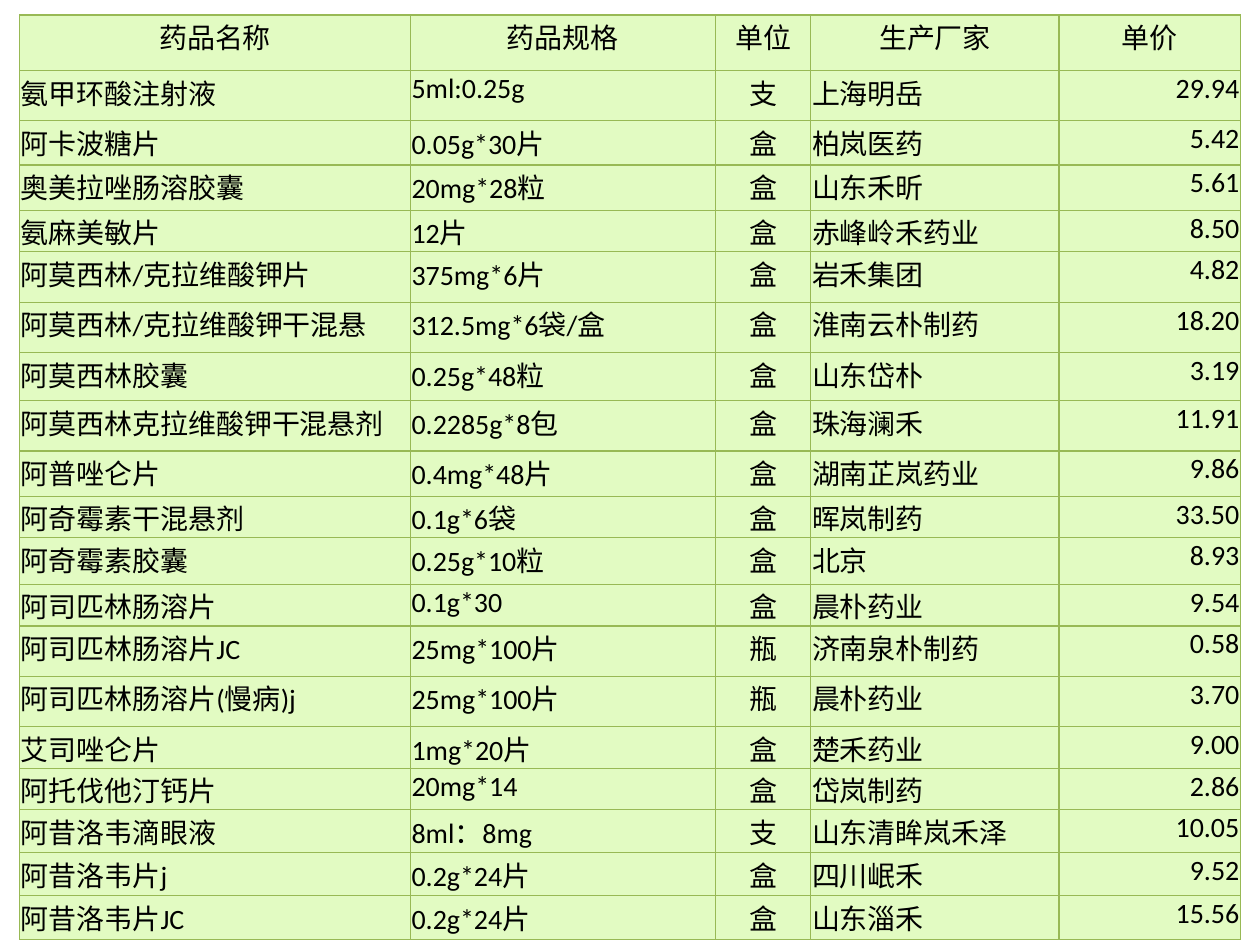
"""Build a one-slide price list of medicines."""
from lxml import etree
from pptx import Presentation
from pptx.dml.color import RGBColor
from pptx.enum.text import MSO_ANCHOR, PP_ALIGN
from pptx.oxml.ns import qn
from pptx.util import Pt

LEFT, MID, RIGHT = PP_ALIGN.LEFT, PP_ALIGN.CENTER, PP_ALIGN.RIGHT
TOP = MSO_ANCHOR.TOP
COLORS = {"fill": "E2FBC2", "line": "98B955", "text": "000000"}
FONT, SIZE, EDGE = "Calibri", 16, 0.75
WIDTHS = [223.2, 174.2, 54.7, 141.8, 103.7]
HEIGHTS = [31.7, 28.8, 25.2, 25.9, 23, 28.8, 28.8, 27.4, 28.8, 25.9,
           23.8, 26.6, 19.4, 28.8, 28.8, 19.4, 23, 24.5, 24.5, 25.2]
ALIGNS = [LEFT, LEFT, MID, LEFT, RIGHT]
HEADS = ["药品名称", "药品规格", "单位", "生产厂家", "单价"]
DRUGS = [
    ["氨甲环酸注射液", "5ml:0.25g", "支", "上海明岳", "29.94"],
    ["阿卡波糖片", "0.05g*30片", "盒", "柏岚医药", "5.42"],
    ["奥美拉唑肠溶胶囊", "20mg*28粒", "盒", "山东禾昕", "5.61"],
    ["氨麻美敏片", "12片", "盒", "赤峰岭禾药业", "8.50"],
    ["阿莫西林/克拉维酸钾片", "375mg*6片", "盒", "岩禾集团", "4.82"],
    ["阿莫西林/克拉维酸钾干混悬", "312.5mg*6袋/盒", "盒", "淮南云朴制药", "18.20"],
    ["阿莫西林胶囊", "0.25g*48粒", "盒", "山东岱朴", "3.19"],
    ["阿莫西林克拉维酸钾干混悬剂", "0.2285g*8包", "盒", "珠海澜禾", "11.91"],
    ["阿普唑仑片", "0.4mg*48片", "盒", "湖南芷岚药业", "9.86"],
    ["阿奇霉素干混悬剂", "0.1g*6袋", "盒", "晖岚制药", "33.50"],
    ["阿奇霉素胶囊", "0.25g*10粒", "盒", "北京", "8.93"],
    ["阿司匹林肠溶片", "0.1g*30", "盒", "晨朴药业", "9.54"],
    ["阿司匹林肠溶片JC", "25mg*100片", "瓶", "济南泉朴制药", "0.58"],
    ["阿司匹林肠溶片(慢病)j", "25mg*100片", "瓶", "晨朴药业", "3.70"],
    ["艾司唑仑片", "1mg*20片", "盒", "楚禾药业", "9.00"],
    ["阿托伐他汀钙片", "20mg*14", "盒", "岱岚制药", "2.86"],
    ["阿昔洛韦滴眼液", "8ml：8mg", "支", "山东清眸岚禾泽", "10.05"],
    ["阿昔洛韦片j", "0.2g*24片", "盒", "四川岷禾", "9.52"],
    ["阿昔洛韦片JC", "0.2g*24片", "盒", "山东淄禾", "15.56"],
]


def tint(name):
    """Return the named colour."""
    return RGBColor.from_string(COLORS[name])


def add_edges(cell):
    """Draw a thin line on all four sides of a cell."""
    props = cell._tc.get_or_add_tcPr()
    for rank, side in enumerate(["lnL", "lnR", "lnT", "lnB"]):
        line = etree.Element(qn(f"a:{side}"), w=str(Pt(EDGE)))
        solid = etree.SubElement(line, qn("a:solidFill"))
        etree.SubElement(solid, qn("a:srgbClr"), val=COLORS["line"])
        props.insert(rank, line)


def fill_cell(cell, text, align):
    """Set the text, fill, margins and edges of a cell."""
    cell.margin_left = cell.margin_right = cell.margin_top = Pt(0.7)
    cell.margin_bottom = Pt(0)
    cell.vertical_anchor = TOP
    cell.fill.solid()
    cell.fill.fore_color.rgb = tint("fill")
    add_edges(cell)
    para = cell.text_frame.paragraphs[0]
    para.alignment = align
    run = para.add_run()
    run.text = text
    run.font.name, run.font.size, run.font.bold = FONT, Pt(SIZE), False
    run.font.color.rgb = tint("text")


def add_list(slide):
    """Add the price table."""
    rows = [HEADS] + DRUGS
    table = slide.shapes.add_table(
        len(rows), len(WIDTHS), Pt(11.3), Pt(8.6),
        Pt(sum(WIDTHS)), Pt(sum(HEIGHTS))).table
    table.horz_banding = False
    for col, width in zip(table.columns, WIDTHS):
        col.width = Pt(width)
    for row, height in zip(table.rows, HEIGHTS):
        row.height = Pt(height)
    for r, texts in enumerate(rows):
        for c, text in enumerate(texts):
            fill_cell(table.cell(r, c), text, ALIGNS[c] if r else MID)


def main():
    """Build and save the deck."""
    deck = Presentation()
    deck.slide_width, deck.slide_height = Pt(720), Pt(540)
    add_list(deck.slides.add_slide(deck.slide_layouts[6]))
    deck.save("out.pptx")


if __name__ == "__main__":
    main()
